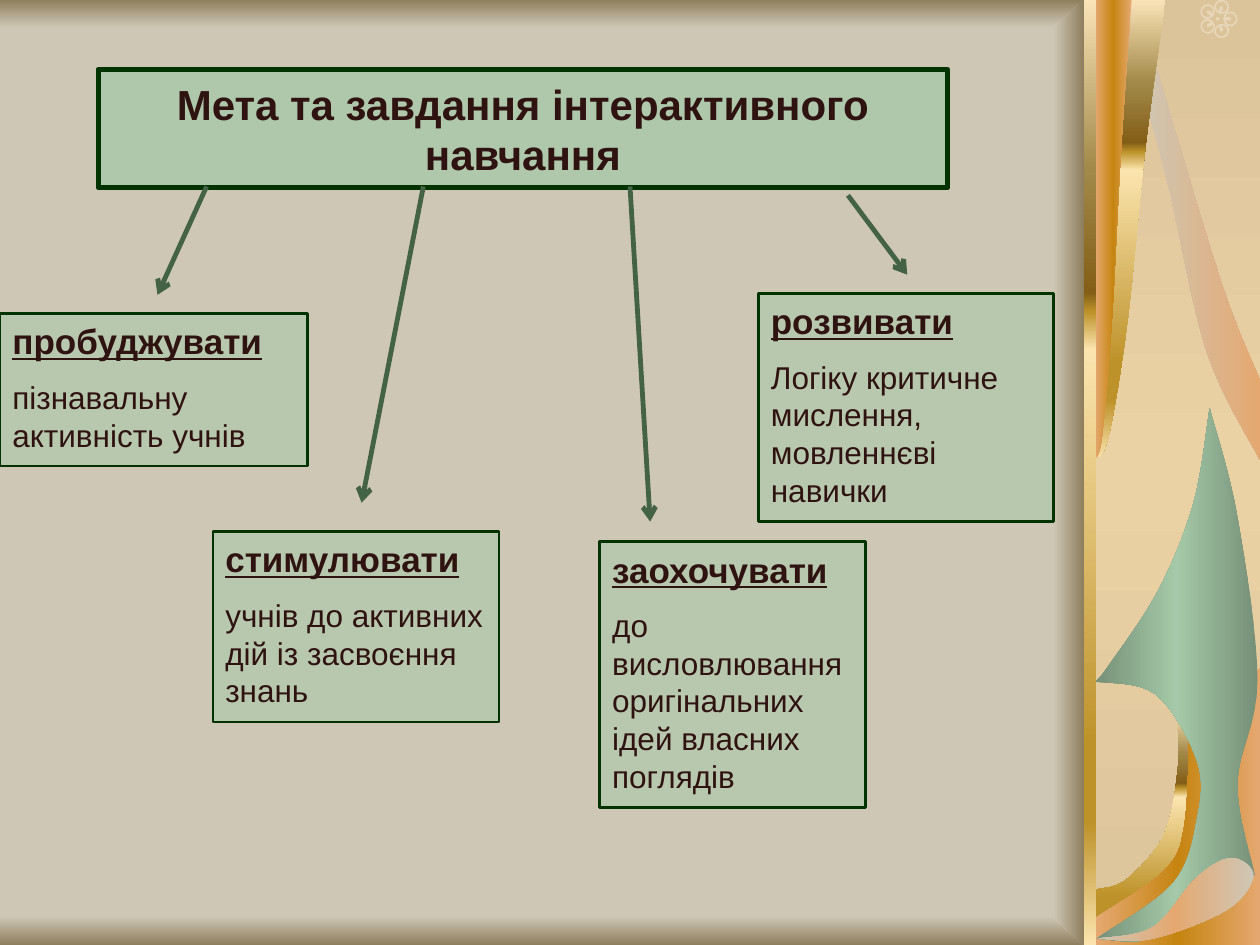
"""Builds a slide on the aims of interactive teaching, with an ornamental right border."""
from dataclasses import dataclass
from math import cos, radians, sin

from lxml.etree import SubElement
from pptx import Presentation
from pptx.dml.color import RGBColor
from pptx.enum.shapes import MSO_CONNECTOR as Connector, MSO_SHAPE as Preset
from pptx.enum.text import MSO_ANCHOR as Anchor, MSO_AUTO_SIZE as AutoSize, PP_ALIGN as Align
from pptx.oxml.ns import qn
from pptx.util import Inches, Pt

COLUMNS, ROWS = 100, 75
CURVE_STEPS = 8


@dataclass(frozen=True)
class Gradient:
    """Colour stops as (percent, colour) and a clockwise angle."""
    stops: tuple
    angle: int = 0


@dataclass(frozen=True)
class Theme:
    """Colours, font and type sizes of the slide."""
    font: str = "Arial"
    paper: str = "CFC7B5"
    shade: str = "8E7F5E"
    green: str = "A5C9A8"
    border: str = "003300"
    arrow: str = "436246"
    ink: str = "2F1311"
    petal: str = "E7D6B7"
    title_size: int = 24
    head_size: int = 20
    body_size: int = 18
    title_alpha: int = 75
    card_alpha: int = 53


@dataclass(frozen=True)
class Band:
    """A rectangle of the frame, in columns and rows."""
    area: tuple
    fill: Gradient


@dataclass(frozen=True)
class Ribbon:
    """A closed outline made of smooth strokes that meet in corners."""
    strokes: tuple
    fill: Gradient


@dataclass(frozen=True)
class Card:
    """One aim: its area, its verb and what the verb applies to."""
    area: tuple
    head: str
    body: str


@dataclass(frozen=True)
class Arrow:
    """A straight arrow between two grid points."""
    start: tuple
    end: tuple


def horn(share: float, fill: Gradient) -> Ribbon:
    """Describe a hanging horn whose width is a share of the widest one."""
    edge = ((0, 36.5), (1.1, 34.6), (2.6, 25.4), (4, 11.8), (5.6, 0))
    return Ribbon((tuple((86.9 + share * x, y) for x, y in edge), ((86.9, 0),)), fill)


THEME = Theme()
GOLD = Gradient(((0, "FAE3B7"), (18, "A28949"), (31, "835E17"), (33, "BD922A"), (37, "FBE4AE"),
                 (79, "BD922A"), (87, "BD922A"), (100, "FBE4AE")), 90)
AMBER = Gradient(((0, "E5A871"), (50, "C68510"), (100, "E5A871")))
SAND = Gradient(((0, "DBC39A"), (50, "EBD2A5"), (100, "DBC39A")), 90)
LEAF = Gradient(((0, "769078"), (50, THEME.green), (100, "769078")))
BLUSH = Gradient(((0, THEME.paper), (100, "E5A871")))
SHELL = Gradient(((0, THEME.paper), (50, "E5A871"), (100, THEME.paper)))
FADE_OUT = ((0, THEME.paper), (100, THEME.shade))
FADE_IN = ((0, THEME.shade), (100, THEME.paper))

BANDS = (
    Band((0, 72.7, 88.4, 2.3), Gradient(FADE_OUT, 90)),
    Band((0, 0, 88.4, 2.2), Gradient(FADE_IN, 90)),
    Band((87, 0, 13, ROWS), SAND),
)
GOLD_BAR = Band((86, 0, 1, ROWS), GOLD)
RIBBONS = (
    Ribbon((((93.4, 56.4), (93.5, 60.8), (92.4, 66.2), (89.4, 69.8), (87, 70.6)),
            ((87, ROWS), (COLUMNS, ROWS)), ((COLUMNS, 56.8),)), GOLD),
    Ribbon((((87, 72.8), (92.4, 69.1), (94, 65.5), (94.4, 57.6)),
            ((COLUMNS, 53),), ((COLUMNS, ROWS), (87, ROWS))), AMBER),
    Ribbon((((96, 32.4), (94.7, 40), (91.9, 46.9), (88, 52.8), (86.9, 54.1)),
            ((86.9, 54.1), (91.7, 55.1), (95, 60.4), (95, 65), (93.1, 70.1), (87, 74.5)),
            ((90.1, 74.8), (93.4, 73.4), (97.1, 69), (99.6, 69.5)),
            ((99.6, 69.5), (98.2, 62.2), (99.8, 54), (98.2, 41), (96, 32.4))), LEAF),
    Ribbon((((91.4, 4), (96.8, 22), (COLUMNS, 30.2)),
            ((COLUMNS, 36.5), (95.8, 28), (92.8, 15), (90.5, 5.8), (91.4, 4))), BLUSH),
    horn(1, GOLD),
    horn(0.52, AMBER),
)
SHELL_CURL = Ribbon((((87, 74.5), (91.5, 73.6), (94.9, 69.7), (97.7, 68.1), (99.5, 69.5),
                      (97.4, 72.2), (91.5, 74.5), (87, 74.5)),), SHELL)
EDGE = Ribbon((((86, 0),), ((83.6, 2.1),), ((83.6, 72.9),), ((86, ROWS),)), Gradient(FADE_OUT))

TITLE = "Мета та завдання інтерактивного навчання"
TITLE_AREA = (7.8, 5.5, 67.4, 9.4)
CARDS = (
    Card((0, 24.9, 24.4, 12.1), "пробуджувати", "пізнавальну активність учнів"),
    Card((16.9, 42.2, 22.7, 15.1), "стимулювати", "учнів до активних дій із засвоєння знань"),
    Card((60.2, 23.3, 23.4, 18.1), "розвивати", "Логіку критичне мислення, мовленнєві навички"),
    Card((47.6, 43, 21.1, 21.1), "заохочувати",
         "до висловлювання оригінальних ідей власних поглядів"),
)
ARROWS = (
    Arrow((16.4, 14.8), (12.5, 23.4)), Arrow((33.6, 14.8), (28.7, 39.9)),
    Arrow((50, 14.8), (51.6, 41.4)), Arrow((67.3, 15.5), (72, 21.8)),
)


def grid(*values: float) -> list:
    """Turn grid units into slide lengths."""
    return [Inches(value * 10 / COLUMNS) for value in values]


def paint(shape, gradient: Gradient) -> None:
    """Give a borderless shape a linear gradient."""
    shape.shadow.inherit = False
    shape.line.fill.background()
    shape.fill.gradient()
    shape.fill.gradient_angle = -gradient.angle % 360
    stops = shape._element.spPr.find(qn("a:gradFill")).find(qn("a:gsLst"))
    for stop in list(stops):
        stops.remove(stop)
    for percent, colour in gradient.stops:
        stop = SubElement(stops, qn("a:gs"), pos=str(percent * 1000))
        SubElement(stop, qn("a:srgbClr"), val=colour)


def draw_band(page, band: Band) -> None:
    """Draw one rectangle of the frame."""
    paint(page.shapes.add_shape(Preset.RECTANGLE, *grid(*band.area)), band.fill)


def smooth(stroke: tuple) -> list:
    """Sample a Catmull-Rom curve through the points of a stroke."""
    knots = (stroke[0], *stroke, stroke[-1])
    points = [stroke[0]]
    for a, b, c, d in zip(knots, knots[1:], knots[2:], knots[3:]):
        for index in range(1, CURVE_STEPS + 1):
            t = index / CURVE_STEPS
            points.append(tuple(
                q + t * (r - p + t * (2 * p - 5 * q + 4 * r - s + t * (3 * (q - r) + s - p))) / 2
                for p, q, r, s in zip(a, b, c, d)))
    return points


def draw_ribbon(page, ribbon: Ribbon) -> None:
    """Draw one outline from its strokes."""
    points = [grid(*point) for stroke in ribbon.strokes for point in smooth(stroke)]
    builder = page.shapes.build_freeform(*points[0])
    builder.add_line_segments(points[1:])
    paint(builder.convert_to_shape(), ribbon.fill)


def draw_oval(page, centre: tuple, size: tuple, turn: float, outlined: bool) -> None:
    """Draw one part of the flower, as an outline or filled."""
    left, top = (c - s / 2 for c, s in zip(centre, size))
    oval = page.shapes.add_shape(Preset.OVAL, *grid(left, top, *size))
    oval.rotation = turn
    oval.shadow.inherit = False
    target, other = (oval.line.fill, oval.fill) if outlined else (oval.fill, oval.line.fill)
    target.solid()
    target.fore_color.rgb = RGBColor.from_string(THEME.petal)
    other.background()
    if outlined:
        oval.line.width = Pt(1)


def draw_flower(page, x: float, y: float) -> None:
    """Draw five petals with stamens around a centre."""
    draw_oval(page, (x, y), (0.3, 0.3), 0, False)
    for turn in range(0, 360, 72):
        across, down = cos(radians(turn)), sin(radians(turn))
        draw_oval(page, (x + across, y + down), (1, 1.05), turn, True)
        draw_oval(page, (x + 0.75 * across, y + 0.75 * down), (0.65, 0.3), turn, False)


def style_box(box, alpha: int, width: float) -> None:
    """Give a text box its translucent fill, border and wrapping."""
    box.fill.solid()
    box.fill.fore_color.rgb = RGBColor.from_string(THEME.green)
    colour = box._element.spPr.find(qn("a:solidFill"))[0]
    SubElement(colour, qn("a:alpha"), val=str(alpha * 1000))
    box.line.color.rgb = RGBColor.from_string(THEME.border)
    box.line.width = Pt(width)
    box.text_frame.word_wrap = True
    box.text_frame.auto_size = AutoSize.NONE


def add_span(para, text: str, size: int, bold: bool, underline: bool) -> None:
    """Add one formatted run."""
    span = para.add_run()
    span.text = text
    font = span.font
    font.name, font.size, font.bold, font.underline = THEME.font, Pt(size), bold, underline
    font.color.rgb = RGBColor.from_string(THEME.ink)


def draw_title(page) -> None:
    """Place and format the title placeholder."""
    box = page.shapes.title
    box.left, box.top, box.width, box.height = grid(*TITLE_AREA)
    style_box(box, THEME.title_alpha, 3)
    box.text_frame.vertical_anchor = Anchor.MIDDLE
    para = box.text_frame.paragraphs[0]
    para.alignment = Align.CENTER
    add_span(para, TITLE, THEME.title_size, True, False)


def draw_card(page, card: Card) -> None:
    """Draw one aim with its heading and text."""
    box = page.shapes.add_shape(Preset.RECTANGLE, *grid(*card.area))
    box.shadow.inherit = False
    style_box(box, THEME.card_alpha, 1.5)
    frame = box.text_frame
    frame.vertical_anchor = Anchor.TOP
    head, body = frame.paragraphs[0], frame.add_paragraph()
    head.alignment = body.alignment = Align.LEFT
    body.space_before = Pt(THEME.body_size / 2)
    add_span(head, card.head, THEME.head_size, True, True)
    add_span(body, card.body, THEME.body_size, False, False)


def draw_arrow(page, arrow: Arrow) -> None:
    """Draw one arrow from the title to an aim."""
    line = page.shapes.add_connector(Connector.STRAIGHT, *grid(*arrow.start, *arrow.end))
    line.line.color.rgb = RGBColor.from_string(THEME.arrow)
    line.line.width = Pt(2.75)
    SubElement(line.line._get_or_add_ln(), qn("a:tailEnd"), type="arrow")
    SubElement(line._element.spPr, qn("a:effectLst"))


def main() -> None:
    """Build and save the deck."""
    deck = Presentation()
    deck.slide_width, deck.slide_height = grid(COLUMNS, ROWS)
    page = deck.slides.add_slide(deck.slide_layouts[5])
    page.background.fill.solid()
    page.background.fill.fore_color.rgb = RGBColor.from_string(THEME.paper)
    for band in BANDS:
        draw_band(page, band)
    draw_flower(page, 96.65, 1.5)
    for ribbon in RIBBONS:
        draw_ribbon(page, ribbon)
    draw_band(page, GOLD_BAR)
    for ribbon in (SHELL_CURL, EDGE):
        draw_ribbon(page, ribbon)
    draw_title(page)
    for card in CARDS:
        draw_card(page, card)
    for arrow in ARROWS:
        draw_arrow(page, arrow)
    deck.save("out.pptx")


if __name__ == "__main__":
    main()
